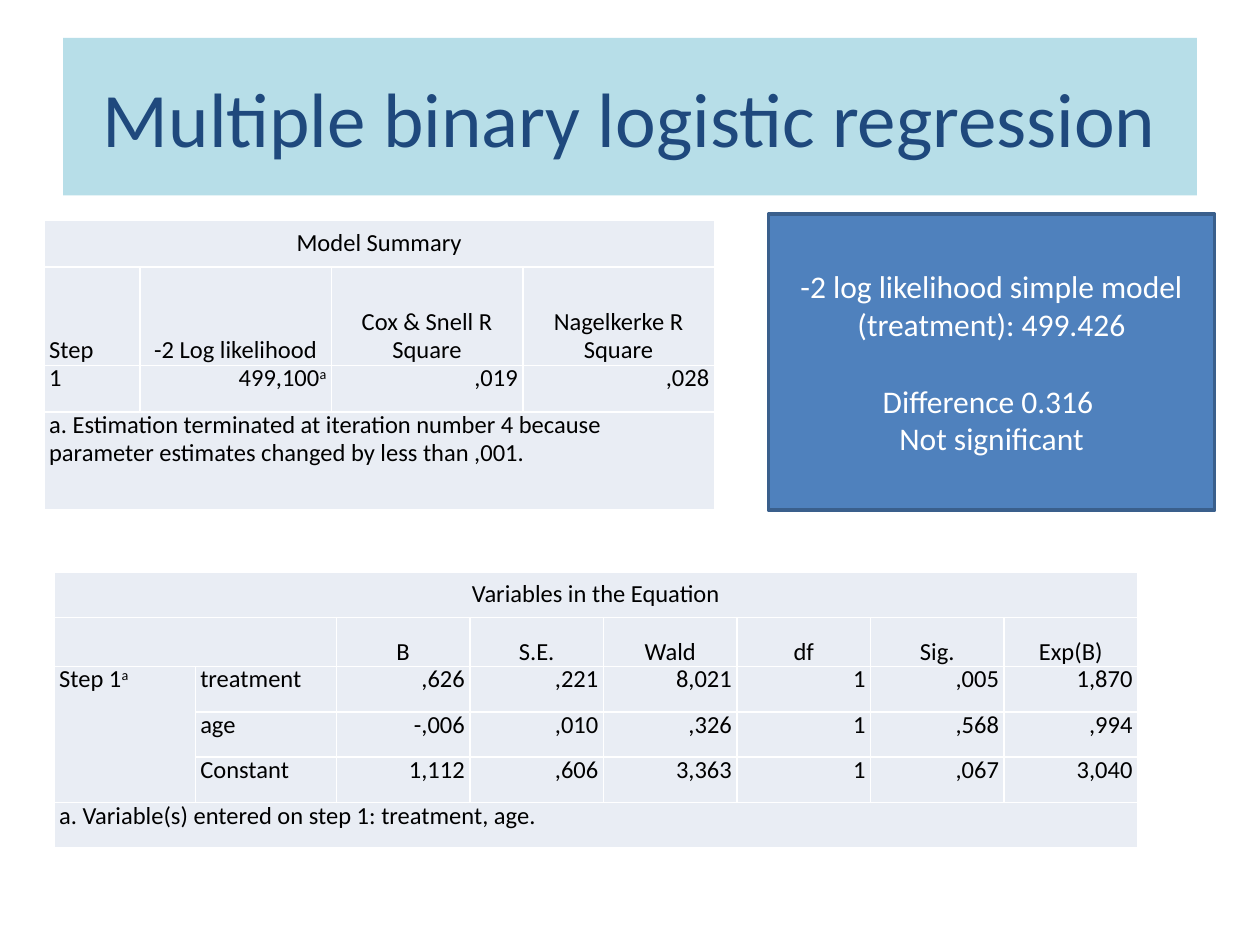
from pptx import Presentation
from pptx.dml.color import RGBColor
from pptx.enum.shapes import MSO_SHAPE
from pptx.enum.text import MSO_ANCHOR, PP_ALIGN
from pptx.util import Inches, Pt

PALE = RGBColor(0xB7, 0xDE, 0xE8)
NAVY = RGBColor(0x1F, 0x49, 0x7D)
BLUE = RGBColor(0x4F, 0x81, 0xBD)
EDGE = RGBColor(0x3A, 0x5F, 0x8C)
GRAY = RGBColor(0xE9, 0xED, 0xF4)
BLACK = RGBColor(0, 0, 0)
WHITE = RGBColor(0xFF, 0xFF, 0xFF)

TITLE = "Multiple binary logistic regression"

# "^" marks the start of a superscript; "labels" counts the left-aligned columns
SUMMARY = {
    "at": (0.35, 1.75),
    "cols": [0.76] + [1.52] * 3,
    "rows": [0.37, 0.78, 0.37, 0.78],
    "labels": 1,
    "merges": [],
    "text": [
        ["Model Summary"],
        ["Step", "-2 Log likelihood", "Cox & Snell R Square", "Nagelkerke R Square"],
        ["1", "499,100^a", ",019", ",028"],
        ["a. Estimation terminated at iteration number 4 because "
         "parameter estimates changed by less than ,001."],
    ],
}
VARIABLES = {
    "at": (0.43, 4.54),
    "cols": [1.12] * 2 + [1.06] * 6,
    "rows": [0.36, 0.39] + [0.36] * 4,
    "labels": 2,
    "merges": [((1, 0), (1, 1)), ((2, 0), (4, 0))],
    "text": [
        ["Variables in the Equation"],
        ["", "", "B", "S.E.", "Wald", "df", "Sig.", "Exp(B)"],
        ["Step 1^a", "treatment", ",626", ",221", "8,021", "1", ",005", "1,870"],
        ["", "age", "-,006", ",010", ",326", "1", ",568", ",994"],
        ["", "Constant", "1,112", ",606", "3,363", "1", ",067", "3,040"],
        ["a. Variable(s) entered on step 1: treatment, age."],
    ],
}

# Line of text, space before it in points
NOTE = [
    ("-2 log likelihood simple model", 0),
    ("(treatment): 499.426", 0),
    ("Difference 0.316 ", 22),
    ("Not significant", 0),
]


def style(run, size, color):
    run.font.name = "Calibri"
    run.font.size = Pt(size)
    run.font.color.rgb = color


def paint(shape, color):
    shape.fill.solid()
    shape.fill.fore_color.rgb = color


def place(shape, *box):
    for name, value in zip(("left", "top", "width", "height"), box):
        setattr(shape, name, Inches(value))


def write_cell(cell, text, align, anchor):
    margins = {"margin_left": 0.04, "margin_right": 0.04,
               "margin_top": 0, "margin_bottom": 0}
    for name, value in margins.items():
        setattr(cell, name, Inches(value))
    cell.vertical_anchor = anchor
    paint(cell, GRAY)
    par = cell.text_frame.paragraphs[0]
    par.alignment = align
    par.line_spacing = Pt(16)
    for i, part in enumerate(text.split("^") if text else []):
        run = par.add_run()
        run.text = part
        style(run, 14, BLACK)
        if i:
            run.font._element.set("baseline", "30000")


def add_grid(slide, data):
    cols, rows = data["cols"], data["rows"]
    box = [Inches(v) for v in (*data["at"], sum(cols), sum(rows))]
    table = slide.shapes.add_table(len(rows), len(cols), *box).table
    table.first_row = table.horz_banding = False
    for col, width in zip(table.columns, cols):
        col.width = Inches(width)
    for row, height in zip(table.rows, rows):
        row.height = Inches(height)

    last = len(cols) - 1
    full = [((r, 0), (r, last)) for r in (0, len(rows) - 1)]
    for start, end in full + data["merges"]:
        table.cell(*start).merge(table.cell(*end))

    anchors = {0: MSO_ANCHOR.MIDDLE, 1: MSO_ANCHOR.BOTTOM}
    for r, line in enumerate(data["text"]):
        for c in range(len(cols)):
            if r == 0:
                align = PP_ALIGN.CENTER
            elif c < data["labels"]:
                align = PP_ALIGN.LEFT
            else:
                align = PP_ALIGN.CENTER if r == 1 else PP_ALIGN.RIGHT
            text = line[c] if c < len(line) else ""
            write_cell(table.cell(r, c), text, align, anchors.get(r, MSO_ANCHOR.TOP))


def add_note(slide):
    box = [Inches(v) for v in (6.1, 1.7, 3.54, 2.35)]
    note = slide.shapes.add_shape(MSO_SHAPE.RECTANGLE, *box)
    note.shadow.inherit = False
    paint(note, BLUE)
    note.line.color.rgb = EDGE
    note.line.width = Pt(2)
    frame = note.text_frame
    frame.word_wrap = True
    frame.vertical_anchor = MSO_ANCHOR.MIDDLE
    for i, (text, gap) in enumerate(NOTE):
        par = frame.add_paragraph() if i else frame.paragraphs[0]
        par.alignment = PP_ALIGN.CENTER
        par.space_before = Pt(gap)
        run = par.add_run()
        run.text = text
        style(run, 18, WHITE)


def main():
    deck = Presentation()
    deck.slide_width, deck.slide_height = Inches(10), Inches(7.5)
    slide = deck.slides.add_slide(deck.slide_layouts[5])
    title = slide.shapes.title
    place(title, 0.5, 0.3, 9, 1.25)
    paint(title, PALE)
    title.text_frame.text = TITLE
    title.text_frame.vertical_anchor = MSO_ANCHOR.MIDDLE
    par = title.text_frame.paragraphs[0]
    par.alignment = PP_ALIGN.CENTER
    style(par.runs[0], 44, NAVY)
    for data in (SUMMARY, VARIABLES):
        add_grid(slide, data)
    add_note(slide)
    deck.save("out.pptx")


if __name__ == "__main__":
    main()
